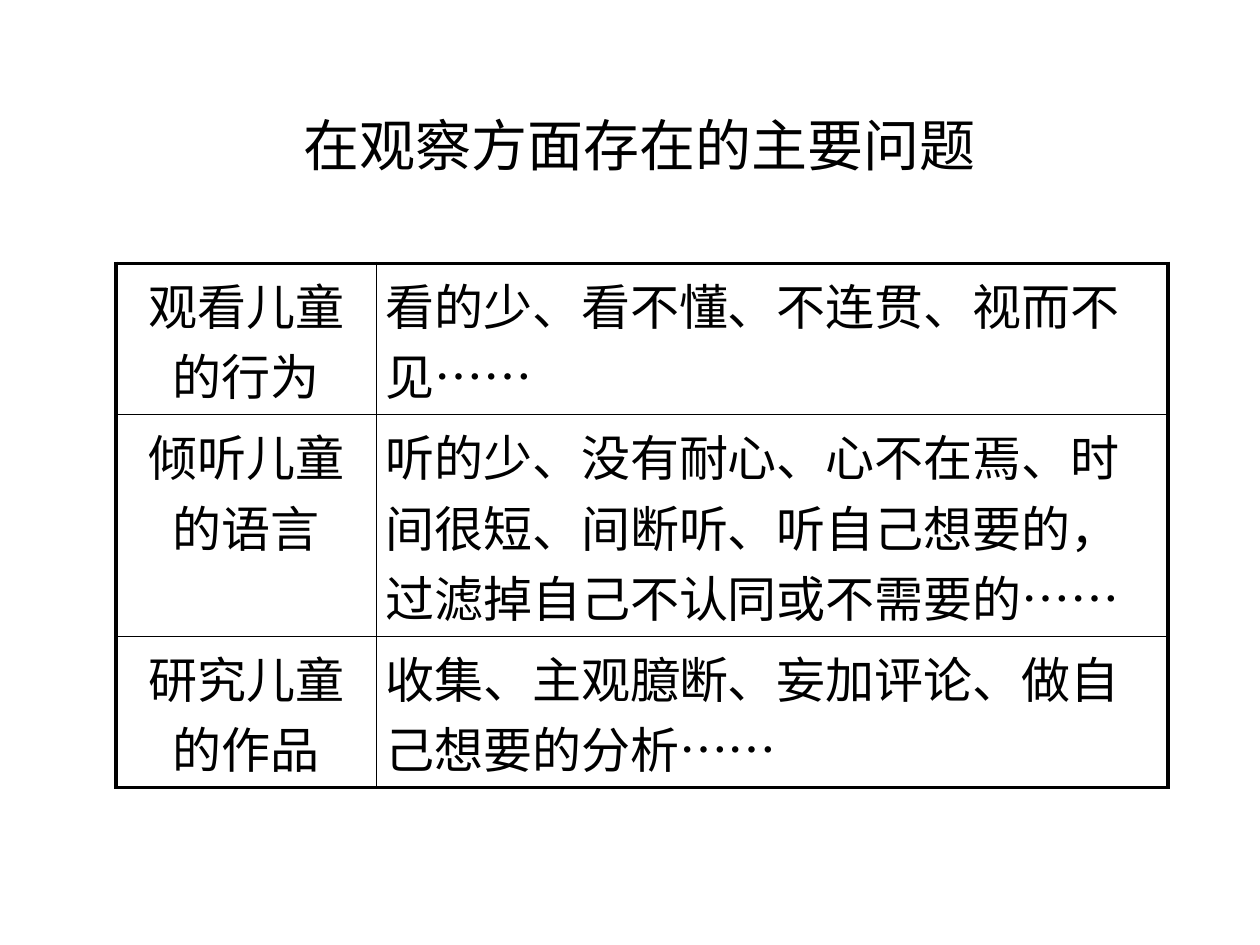
from dataclasses import dataclass

from lxml import etree
from pptx import Presentation
from pptx.dml.color import RGBColor
from pptx.enum.text import MSO_ANCHOR, PP_ALIGN
from pptx.oxml.ns import qn
from pptx.util import Inches, Pt

MID, TOP = MSO_ANCHOR.MIDDLE, MSO_ANCHOR.TOP
MID_ALIGN, LEFT = PP_ALIGN.CENTER, PP_ALIGN.LEFT
WIDE, HIGH = Inches(10), Inches(7.5)


@dataclass(frozen=True)
class Theme:
    ink: str = "000000"
    face: str = "Noto Sans CJK SC"
    head: int = 32
    body: int = 28
    thick: float = 2.25
    thin: float = 1


THEME = Theme()
TITLE = "在观察方面存在的主要问题"
ROWS = [
    ("观看儿童的行为", "看的少、看不懂、不连贯、视而不见……"),
    ("倾听儿童的语言", "听的少、没有耐心、心不在焉、时间很短、间断听、"
     "听自己想要的，过滤掉自己不认同或不需要的……"),
    ("研究儿童的作品", "收集、主观臆断、妄加评论、做自己想要的分析……"),
]
COLS = (2.07, 6.28)
TALL = (1.2, 1.76, 1.2)
TITLE_BOX = tuple(map(Inches, (1.22, 0.83, 7.72, 0.69)))
TABLE_BOX = tuple(map(Inches, (0.92, 2.09, sum(COLS), sum(TALL))))


def apply(part, **values):
    for name, value in values.items():
        setattr(part, name, value)


def write(para, text, size, align):
    para.alignment = align
    run = para.add_run()
    run.text = text
    apply(run.font, name=THEME.face, size=Pt(size))
    run.font.color.rgb = RGBColor.from_string(THEME.ink)
    props = run.font._element
    props.set("lang", "zh-CN")
    etree.SubElement(props, qn("a:ea"), typeface=THEME.face)


def space(para, share):
    before = etree.SubElement(para._p.get_or_add_pPr(), qn("a:spcBef"))
    etree.SubElement(before, qn("a:spcPct"), val=str(int(share * 100000)))


def border(cell, edges):
    props = cell._tc.get_or_add_tcPr()
    for order, (side, outer) in enumerate(edges.items()):
        width = Pt(THEME.thick if outer else THEME.thin)
        line = etree.Element(qn("a:ln" + side), w=str(width))
        fill = etree.SubElement(line, qn("a:solidFill"))
        etree.SubElement(fill, qn("a:srgbClr"), val=THEME.ink)
        props.insert(order, line)


def add_title(slide, box):
    frame = slide.shapes.add_textbox(*box).text_frame
    apply(frame, word_wrap=True, vertical_anchor=MID)
    para = frame.paragraphs[0]
    para.line_spacing = 0.9
    write(para, TITLE, THEME.head, MID_ALIGN)


def add_grid(slide, box):
    left, top, width, height = box
    table = slide.shapes.add_table(
        len(ROWS), len(COLS), left, top, width, height).table
    apply(table, first_row=False, horz_banding=False)
    for col, share in zip(table.columns, COLS):
        col.width = int(width * share / sum(COLS))
    for row, share in zip(table.rows, TALL):
        row.height = int(height * share / sum(TALL))
    for y, texts in enumerate(ROWS):
        for x, text in enumerate(texts):
            cell = table.cell(y, x)
            apply(cell, vertical_anchor=TOP,
                  margin_left=Inches(0.07), margin_right=Inches(0.07),
                  margin_top=Inches(0.04), margin_bottom=Inches(0.04))
            cell.fill.background()
            border(cell, {"L": x == 0, "R": x == len(COLS) - 1,
                          "T": y == 0, "B": y == len(ROWS) - 1})
            para = cell.text_frame.paragraphs[0]
            write(para, text, THEME.body, LEFT if x else MID_ALIGN)
            space(para, 0.2)


def main():
    deck = Presentation()
    apply(deck, slide_width=WIDE, slide_height=HIGH)
    slide = deck.slides.add_slide(deck.slide_layouts[6])
    add_title(slide, TITLE_BOX)
    add_grid(slide, TABLE_BOX)
    deck.save("out.pptx")


if __name__ == "__main__":
    main()
